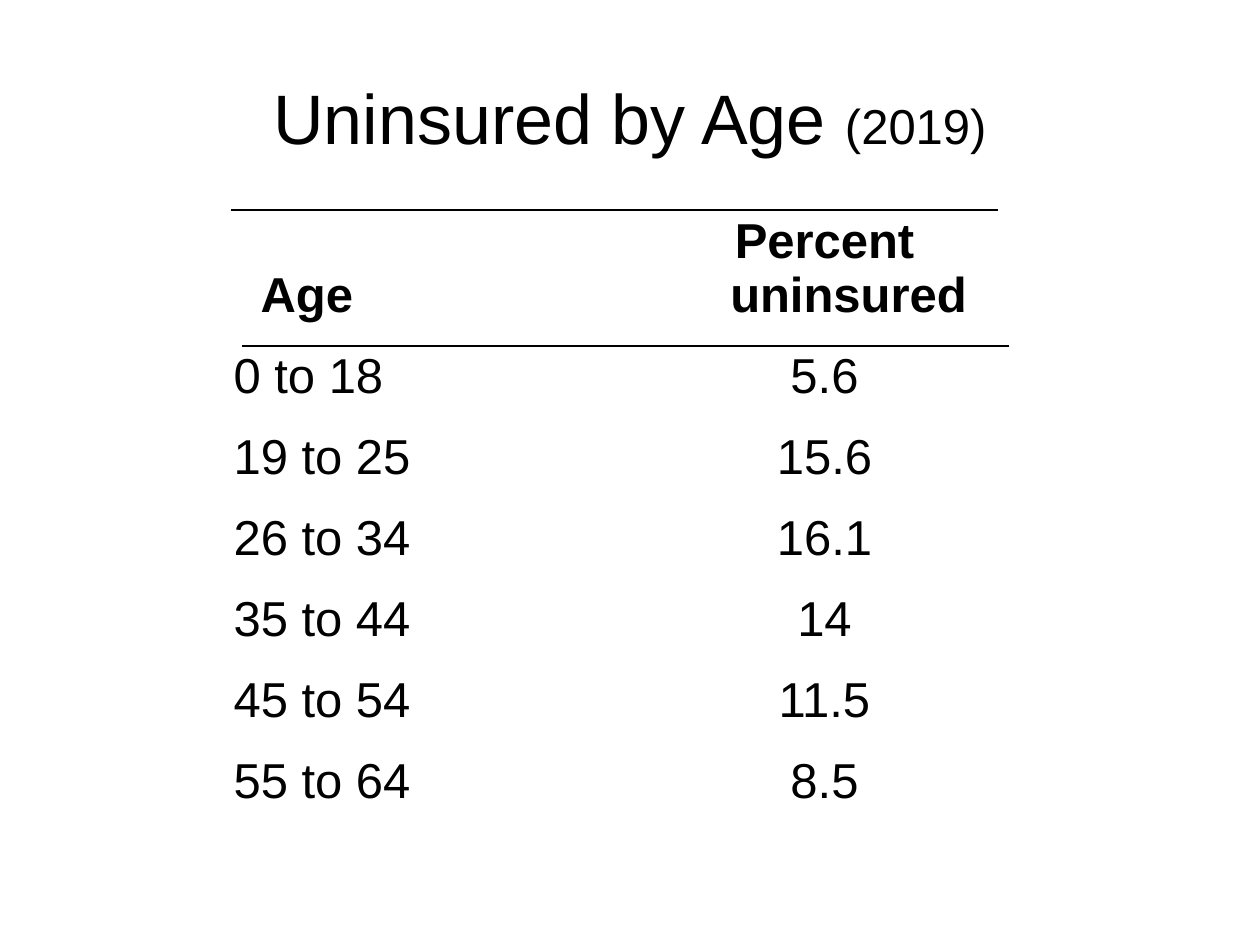
from dataclasses import dataclass

from lxml.etree import SubElement
from pptx import Presentation
from pptx.dml.color import RGBColor
from pptx.enum.shapes import MSO_CONNECTOR
from pptx.enum.text import MSO_ANCHOR, PP_ALIGN
from pptx.oxml.ns import qn
from pptx.util import Emu, Pt


@dataclass(frozen=True)
class Theme:
    ink: RGBColor = RGBColor(0, 0, 0)
    paper: RGBColor = RGBColor(255, 255, 255)
    font: str = "Arial"
    title: int = 40
    body: int = 28
    rule: float = 0.75


THEME = Theme()
HEAD = ("Age", "Percent uninsured")
RATES = (
    ("0 to 18", "5.6"),
    ("19 to 25", "15.6"),
    ("26 to 34", "16.1"),
    ("35 to 44", "14"),
    ("45 to 54", "11.5"),
    ("55 to 64", "8.5"),
)


def px(count):
    return Emu(round(count * 914400 / 126))


def style(run, size, bold=False):
    run.font.name = THEME.font
    run.font.size = Pt(size)
    run.font.bold = bold
    run.font.color.rgb = THEME.ink


def add_title(slide, box):
    shape = slide.shapes.add_textbox(*map(px, box))
    frame = shape.text_frame
    frame.word_wrap = True
    frame.vertical_anchor = MSO_ANCHOR.MIDDLE
    para = frame.paragraphs[0]
    para.alignment = PP_ALIGN.CENTER
    for text, size in (("Uninsured by Age ", THEME.title), ("(2019)", THEME.body)):
        run = para.add_run()
        run.text = text
        style(run, size)


def fill_cell(cell, text, align, bold, first):
    cell.fill.background()
    cell.vertical_anchor = MSO_ANCHOR.BOTTOM
    para = cell.text_frame.paragraphs[0]
    para.text = text
    para.alignment = align
    style(para.runs[0], THEME.body, bold)
    # Hanging indent
    props = para._p.get_or_add_pPr()
    props.set("marL", str(px(48)))
    props.set("indent", str(px(first - 48)))


def add_rule(slide, left, top, width):
    line = slide.shapes.add_connector(
        MSO_CONNECTOR.STRAIGHT, px(left), px(top), px(left + width), px(top))
    line.line.color.rgb = THEME.ink
    line.line.width = Pt(THEME.rule)
    SubElement(line._element.spPr, qn("a:effectLst"))


def add_rates(slide, box):
    left, top, width, height = box
    rows = (HEAD, *RATES)
    table = slide.shapes.add_table(len(rows), len(HEAD), *map(px, box)).table
    table.first_row = table.horz_banding = False

    # Grid: a tall head row, then equal rows
    first, head = 441, 120
    table.columns[0].width = px(first)
    table.columns[1].width = px(width - first)
    for i, row in enumerate(table.rows):
        row.height = px((height - head) / len(RATES) if i else head)

    # Cells: the age heading is set in a little
    aligns = (PP_ALIGN.LEFT, PP_ALIGN.CENTER)
    for i, row in enumerate(rows):
        for j, text in enumerate(row):
            inset = 27 if (i, j) == (0, 0) else 0
            fill_cell(table.cell(i, j), text, aligns[j], i == 0, inset)

    # Rules above and below the head row
    add_rule(slide, left + 10, top + 11, 767)
    add_rule(slide, left + 21, top + 147, 767)


def main():
    deck = Presentation()
    deck.slide_width, deck.slide_height = px(1260), px(945)
    slide = deck.slides.add_slide(deck.slide_layouts[6])
    slide.background.fill.solid()
    slide.background.fill.fore_color.rgb = THEME.paper
    add_title(slide, (63, 38, 1134, 157))
    add_rates(slide, (221, 199, 766, 606))
    deck.save("out.pptx")


if __name__ == "__main__":
    main()
